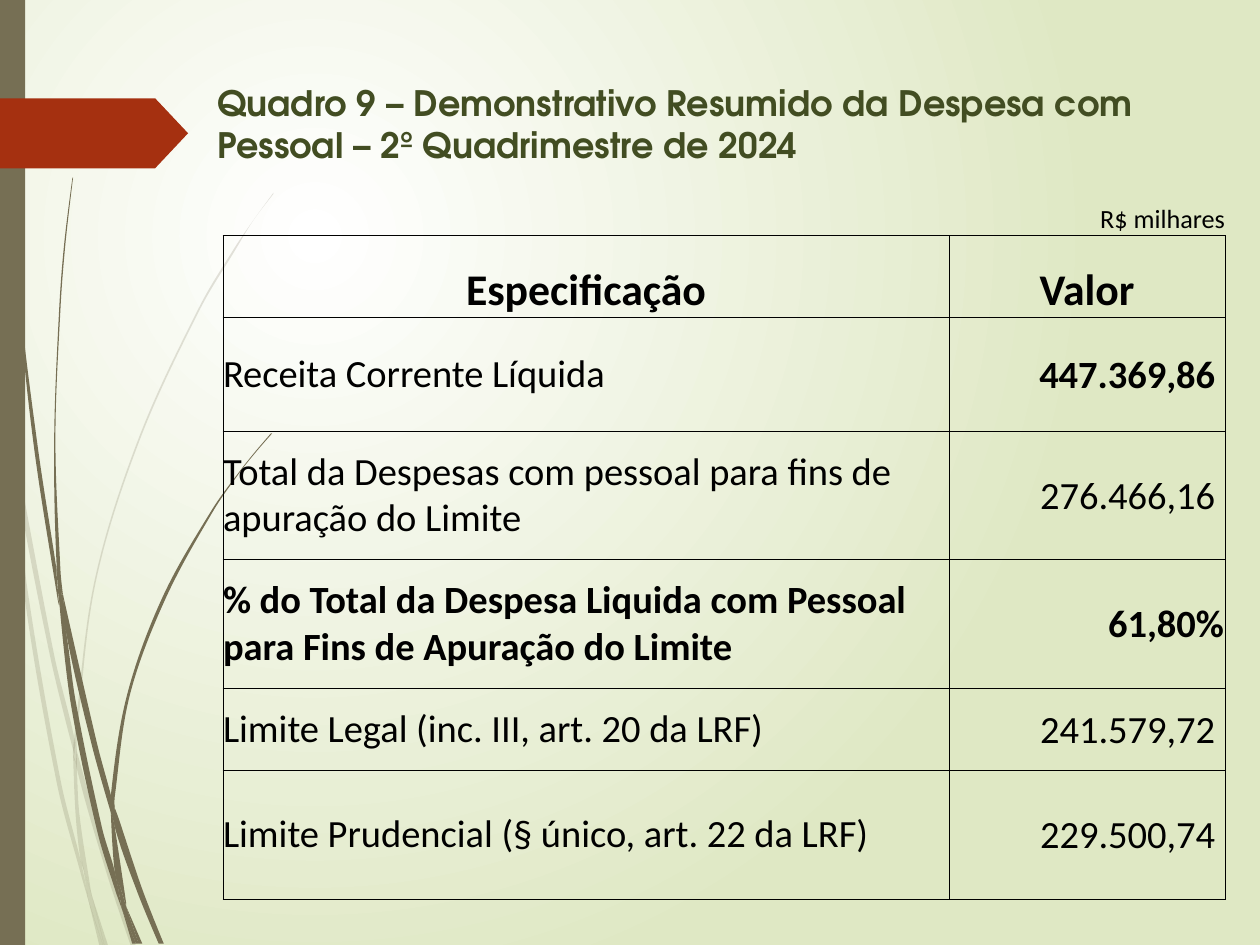
import dataclasses
import math

import pptx
import pptx.dml.color
import pptx.enum.shapes
import pptx.enum.text
import pptx.oxml
import pptx.oxml.ns
import pptx.util

Pt = pptx.util.Pt
qn = pptx.oxml.ns.qn
Align = pptx.enum.text.PP_ALIGN
Anchor = pptx.enum.text.MSO_ANCHOR
Preset = pptx.enum.shapes.MSO_SHAPE


@dataclasses.dataclass(frozen=True)
class Theme:
    paper: str = "FFFFFF"
    edge: str = "DFE8C4"
    stem: str = "766F54"
    accent: str = "A53010"
    title: str = "424D22"
    ink: str = "000000"
    title_font: str = "TeX Gyre Adventor"
    body_font: str = "Calibri"
    title_size: float = 20
    unit_size: float = 15
    header_size: float = 25
    body_size: float = 22
    border: float = 0.5


THEME = Theme()
STEM_GRID = 0.72

PALE_STEMS = [
    [(8, 350), (6, 322), (0, 282), (0, 299), (7, 344)],
    [(40, 522), (59, 599), (59, 586), (43, 520), (10, 345), (12, 376)],
    [(64, 607), (61, 596), (61, 610), (85, 694), (104, 751), (108, 751), (88, 692)],
    [(83, 751), (86, 751), (73, 711)],
    [(64, 683), (48, 619), (22, 469), (12, 376), (8, 350), (19, 470), (45, 621),
     (64, 693), (70, 714), (69, 707)],
    [(58, 599), (60, 646), (64, 683), (67, 692), (73, 711), (72, 706), (63, 646),
     (61, 610), (61, 608)],
    [(61, 584), (76, 462), (111, 349), (159, 245), (187, 198), (201, 175), (217, 154),
     (217, 153), (201, 175), (186, 197), (158, 244), (110, 348), (75, 461), (59, 584),
     (59, 586), (61, 596)],
    [(70, 714), (79, 751), (82, 751)],
    [(61, 608), (61, 610), (61, 596), (59, 586), (58, 599)],
    [(67, 692), (65, 683), (69, 707), (70, 714), (82, 751), (83, 751), (73, 711)],
]
DARK_STEMS = [
    [(5, 110), (14, 233), (27, 355), (46, 477), (47, 481), (45, 457), (45, 453),
     (30, 355), (15, 232), (6, 109), (4, 48), (3, 0), (2, 0), (3, 48)],
    [(73, 592), (88, 645), (88, 633), (88, 631), (77, 590), (50, 472), (53, 505)],
    [(94, 649), (91, 641), (91, 656), (109, 708), (126, 749), (130, 749), (113, 706)],
    [(91, 691), (81, 657), (60, 556), (53, 505), (47, 477), (56, 557), (77, 659),
     (92, 708), (97, 722), (96, 717)],
    [(50, 472), (48, 453), (44, 349), (48, 245), (52, 193), (58, 141), (57.5, 141),
     (51, 193), (47, 245), (43, 349), (45, 449), (49, 472)],
    [(110, 749), (113, 749), (100, 719)],
    [(47, 477), (53, 505), (50, 472), (49, 472), (45, 449), (45, 453)],
    [(91, 633), (103, 552), (131, 476), (169, 406), (191, 374), (203, 359), (216, 344),
     (215, 344), (203, 358), (191, 373), (168, 405), (129, 474), (101, 551), (88, 631),
     (91, 641)],
    [(97, 722), (105, 749), (108, 749)],
    [(88, 645), (91, 691), (96, 706), (100, 719), (100, 716), (91, 656), (90, 651)],
    [(88, 645), (90, 651), (91, 656), (91, 641), (88, 631), (88, 633)],
    [(96, 706), (91, 691), (96, 717), (97, 722), (108, 749), (110, 749), (100, 719)],
]

COLUMN_WIDTHS = [137.7, 128.88, 95.76, 52.56, 157.8]
ROW_HEIGHTS = [28.8, 46.8, 64.8, 73.6, 73.6, 46.8, 73.6]
EXPENSES = [
    ("Receita Corrente Líquida", False, "447.369,86 ", True),
    ("Total da Despesas com pessoal para fins de apuração do Limite", False,
     "276.466,16 ", False),
    ("% do Total da Despesa Liquida com Pessoal para Fins de Apuração do Limite", True,
     "61,80%", True),
    ("Limite Legal (inc. III, art. 20 da LRF)", False, "241.579,72 ", False),
    ("Limite Prudencial (§ único, art. 22 da LRF)", False, "229.500,74 ", False),
]


def rgb(color):
    return pptx.dml.color.RGBColor.from_string(color)


def drawing_xml(tag, body="", attributes=""):
    namespace = pptx.oxml.ns.nsdecls("a")
    return pptx.oxml.parse_xml(f"<a:{tag} {namespace} {attributes}>{body}</a:{tag}>")


def add_run(paragraph, text, size, color, font, bold=False):
    run = paragraph.add_run()
    run.text = text
    run.font.size = Pt(size)
    run.font.name = font
    run.font.bold = bold
    run.font.color.rgb = rgb(color)


def paint_background(slide):
    fill = slide.background.fill
    fill.gradient()
    first, last = fill.gradient_stops
    first.color.rgb, last.color.rgb = rgb(THEME.paper), rgb(THEME.edge)
    first.position, last.position = 0, 1
    gradient = slide.background._cSld.find(".//" + qn("a:gradFill"))
    gradient.replace(
        gradient.find(qn("a:lin")),
        drawing_xml("path", '<a:fillToRect l="50000" t="50000" r="100000" b="100000"/>',
                    'path="circle"'))


def paint_shape(shape, color, opacity=100):
    shape.shadow.inherit = False
    shape.line.fill.background()
    shape.fill.solid()
    shape.fill.fore_color.rgb = rgb(color)
    if opacity < 100:
        color_element = shape._element.spPr.find(".//" + qn("a:srgbClr"))
        color_element.append(drawing_xml("alpha", attributes=f'val="{opacity * 1000}"'))


def tangent(before, here, after):
    arriving = (here[0] - before[0], here[1] - before[1])
    leaving = (after[0] - here[0], after[1] - here[1])
    lengths = math.hypot(*arriving) * math.hypot(*leaving)
    if arriving[0] * leaving[0] + arriving[1] * leaving[1] < 0.85 * lengths:
        return 0, 0
    across = (after[0] - before[0], after[1] - before[1])
    return across[0] / math.hypot(*across), across[1] / math.hypot(*across)


def curve_outline(shape):
    outline = shape._element.spPr.find(".//" + qn("a:path"))
    lines = outline.findall(qn("a:lnTo"))
    ends = [(int(line[0].get("x")), int(line[0].get("y"))) for line in lines]
    count = len(ends)
    tangents = [tangent(ends[i - 1], ends[i], ends[(i + 1) % count]) for i in range(count)]
    for i, line in enumerate(lines):
        start, end = ends[i - 1], ends[i]
        reach = math.dist(start, end) / 3
        leave = [round(p + reach * t) for p, t in zip(start, tangents[i - 1])]
        arrive = [round(p - reach * t) for p, t in zip(end, tangents[i])]
        points = "".join(f'<a:pt x="{x}" y="{y}"/>' for x, y in (leave, arrive, end))
        outline.replace(line, drawing_xml("cubicBezTo", points))


def add_stem(group, corners, opacity):
    points = [(Pt(x * STEM_GRID), Pt(y * STEM_GRID)) for x, y in corners]
    builder = group.shapes.build_freeform(*points[0], scale=1.0)
    builder.add_line_segments(points[1:] + points[:1], close=True)
    shape = builder.convert_to_shape()
    curve_outline(shape)
    paint_shape(shape, THEME.stem, opacity)


def add_block(slide, preset, left, top, width, height, color):
    shape = slide.shapes.add_shape(preset, Pt(left), Pt(top), Pt(width), Pt(height))
    paint_shape(shape, color)
    return shape


def set_title(slide, text):
    title = slide.shapes.title
    title.left, title.top, title.width, title.height = Pt(117), Pt(43.2), Pt(612), Pt(48.24)
    frame = title.text_frame
    frame.word_wrap = True
    frame.auto_size = pptx.enum.text.MSO_AUTO_SIZE.NONE
    frame.vertical_anchor = Anchor.TOP
    paragraph = frame.paragraphs[0]
    paragraph.alignment = Align.LEFT
    add_run(paragraph, text, THEME.title_size, THEME.title, THEME.title_font, True)


def set_borders(cell, sides):
    properties = cell._tc.get_or_add_tcPr()
    solid = f'<a:solidFill><a:srgbClr val="{THEME.ink}"/></a:solidFill>'
    for index, side in enumerate("LRTB"):
        line = solid if side in sides else "<a:noFill/>"
        properties.insert(index, drawing_xml(f"ln{side}", line, f'w="{Pt(THEME.border)}"'))


def write_cell(cell, text, size, alignment, anchor, bold=False):
    cell.vertical_anchor = anchor
    paragraph = cell.text_frame.paragraphs[0]
    paragraph.alignment = alignment
    add_run(paragraph, text, size, THEME.ink, THEME.body_font, bold)


def add_expense_table(slide):
    table = slide.shapes.add_table(
        len(ROW_HEIGHTS), len(COLUMN_WIDTHS), Pt(127.44), Pt(105.84),
        Pt(sum(COLUMN_WIDTHS)), Pt(sum(ROW_HEIGHTS))).table
    table.first_row = table.horz_banding = False
    for column, width in zip(table.columns, COLUMN_WIDTHS):
        column.width = Pt(width)
    for row, height in zip(table.rows, ROW_HEIGHTS):
        row.height = Pt(height)
    value_column = len(COLUMN_WIDTHS) - 1
    for row in range(1, len(ROW_HEIGHTS)):
        table.cell(row, 0).merge(table.cell(row, value_column - 1))
    for row in range(len(ROW_HEIGHTS)):
        for column in range(len(COLUMN_WIDTHS)):
            cell = table.cell(row, column)
            cell.margin_left = cell.margin_right = cell.margin_top = cell.margin_bottom = 0
            cell.fill.background()
            set_borders(cell, "B" if row == 0 else "TB" if cell.is_spanned else "LRTB")
    write_cell(table.cell(0, value_column), "R$ milhares", THEME.unit_size,
               Align.RIGHT, Anchor.BOTTOM)
    for column, text in ((0, "Especificação"), (value_column, "Valor")):
        write_cell(table.cell(1, column), text, THEME.header_size,
                   Align.CENTER, Anchor.BOTTOM, True)
    for row, (label, label_bold, value, value_bold) in enumerate(EXPENSES, start=2):
        write_cell(table.cell(row, 0), label, THEME.body_size,
                   Align.LEFT, Anchor.MIDDLE, label_bold)
        value_cell = table.cell(row, value_column)
        value_cell.margin_left = value_cell.margin_right = value_cell.margin_top = Pt(0.72)
        write_cell(value_cell, value, THEME.body_size, Align.RIGHT, Anchor.MIDDLE, value_bold)


def main():
    presentation = pptx.Presentation()
    presentation.slide_width, presentation.slide_height = Pt(720), Pt(540)
    slide = presentation.slides.add_slide(presentation.slide_layouts[5])
    paint_background(slide)
    for stems, opacity in ((PALE_STEMS, 20), (DARK_STEMS, 100)):
        group = slide.shapes.add_group_shape()
        for corners in stems:
            add_stem(group, corners, opacity)
    add_block(slide, Preset.RECTANGLE, 0, 0, 14.4, 540, THEME.stem)
    arrow = add_block(slide, Preset.PENTAGON, 0, 56.16, 107.5, 40, THEME.accent)
    arrow.adjustments[0] = 0.47
    set_title(slide, "Quadro 9 – Demonstrativo Resumido da Despesa com Pessoal "
                     "– 2º Quadrimestre de 2024")
    add_expense_table(slide)
    presentation.save("out.pptx")


if __name__ == "__main__":
    main()
